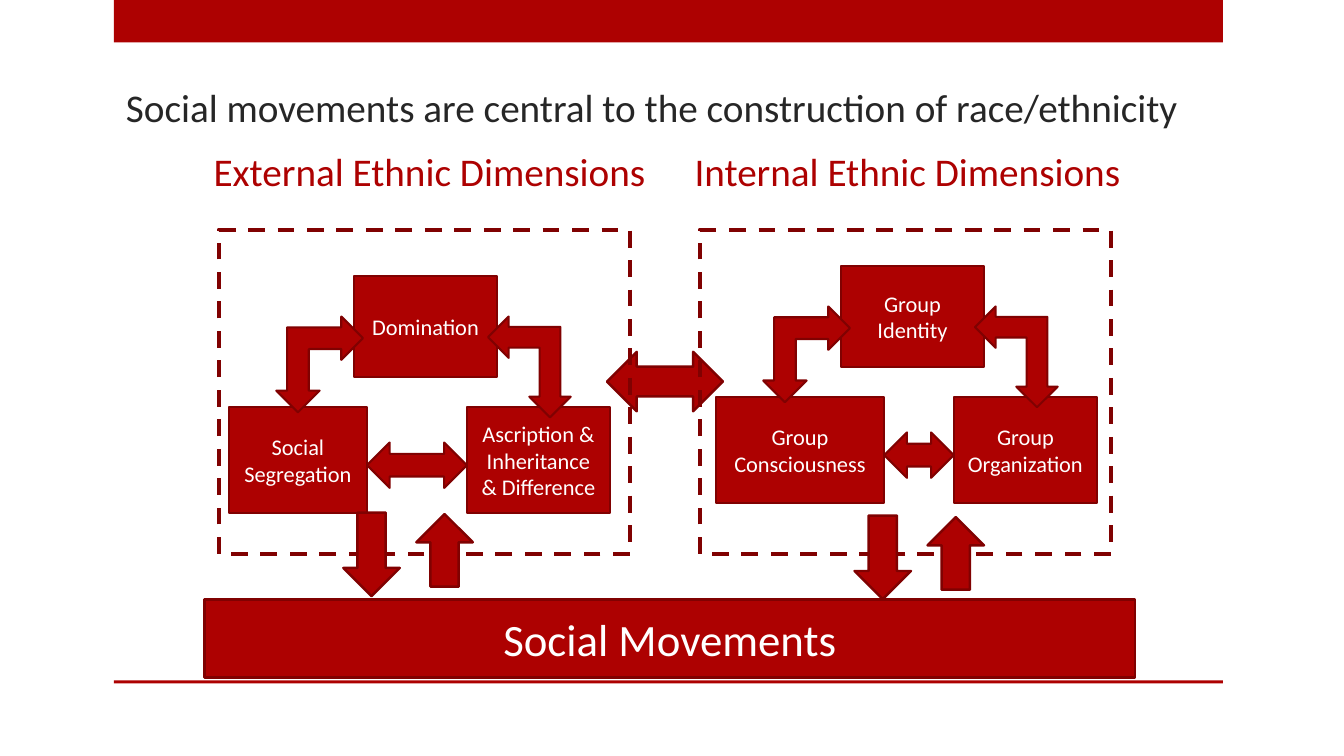
from pptx import Presentation
from pptx.dml.color import RGBColor
from pptx.enum.dml import MSO_LINE
from pptx.enum.shapes import MSO_SHAPE
from pptx.enum.text import MSO_ANCHOR, PP_ALIGN
from pptx.util import Inches, Pt

RED = RGBColor(0xAD, 0x01, 0x01)
DARK = RGBColor(0x80, 0x01, 0x01)
INK = RGBColor(0x26, 0x26, 0x26)
WHITE = RGBColor(0xFF, 0xFF, 0xFF)
RECT = MSO_SHAPE.RECTANGLE
ARROW = MSO_SHAPE.RIGHT_ARROW
DOUBLE = MSO_SHAPE.LEFT_RIGHT_ARROW
ELBOW = MSO_SHAPE.LEFT_UP_ARROW
DASH = MSO_LINE.DASH
MIDDLE, BOTTOM = MSO_ANCHOR.MIDDLE, MSO_ANCHOR.BOTTOM
CENTER = PP_ALIGN.CENTER
FONT = "Calibri"


def style(shape, text, size, color):
    shape.text_frame.text = text
    for par in shape.text_frame.paragraphs:
        par.font.name = FONT
        par.font.size = Pt(size)
        par.font.color.rgb = color


def add_solid(slide, kind, x, y, w, h, line=1.5, turn=0):
    """Red shape with a dark outline, or none if line is 0."""
    shape = slide.shapes.add_shape(kind, Inches(x), Inches(y), Inches(w), Inches(h))
    shape.shadow.inherit = False
    shape.fill.solid()
    shape.fill.fore_color.rgb = RED
    if line:
        shape.line.color.rgb = DARK
        shape.line.width = Pt(line)
    else:
        shape.line.fill.background()
    shape.rotation = turn
    return shape


def add_box(slide, text, x, y, w, h, size=16, line=1.5):
    box = add_solid(slide, RECT, x, y, w, h, line)
    box.text_frame.word_wrap = True
    box.text_frame.vertical_anchor = MIDDLE
    style(box, text, size, WHITE)
    for par in box.text_frame.paragraphs:
        par.alignment = CENTER


def add_label(slide, text, x, y, w, h, color, wrap=False):
    label = slide.shapes.add_textbox(Inches(x), Inches(y), Inches(w), Inches(h))
    label.text_frame.word_wrap = wrap
    label.text_frame.vertical_anchor = BOTTOM
    style(label, text, 28, color)


def add_bands(slide):
    for y, h in ((0, 0.42), (6.75, 0.03)):
        add_solid(slide, RECT, 1.13, y, 11, h, line=0)


def add_triad(slide, x, y, names, wide):
    """Three boxes joined by double arrows; wide is the lower left box."""
    top, left, right = names
    add_box(slide, top, x + 1.24, y, 1.42, 1)
    add_box(slide, left, x, y + 1.3, wide, 1.05)
    add_box(slide, right, x + 2.36, y + 1.3, 1.42, 1.05)
    add_solid(slide, ELBOW, x + 0.47, y + 0.4, 0.86, 0.95, turn=180)
    add_solid(slide, ELBOW, x + 2.48, y + 0.49, 1, 0.82, turn=270)
    add_solid(slide, DOUBLE, x + wide, y + 1.65, 2.36 - wide, 0.45)


def add_frame(slide, x, y):
    frame = slide.shapes.add_shape(RECT, Inches(x), Inches(y), Inches(4.08), Inches(3.22))
    frame.shadow.inherit = False
    frame.fill.background()
    frame.line.color.rgb = DARK
    frame.line.width = Pt(3)
    frame.line.dash_style = DASH


def add_flow(slide, x, y):
    """Down and up arrows between a panel and the base."""
    add_solid(slide, ARROW, x, y + 0.04, 0.83, 0.56, 1.75, 90)
    add_solid(slide, ARROW, x + 0.78, y, 0.72, 0.56, 1.75, 270)


def add_panel(slide, x, y, head, width, names, wide, shift, flow):
    add_triad(slide, x + 0.1 + shift[0], y + 0.46 + shift[1], names, wide)
    add_frame(slide, x, y)
    add_label(slide, head, x - 0.15, y - 0.87, width, 0.57, RED)
    add_flow(slide, x + flow[0], y + flow[1])


def main():
    deck = Presentation()
    deck.slide_width, deck.slide_height = Inches(13.33), Inches(7.5)
    slide = deck.slides.add_slide(deck.slide_layouts[6])

    # Bands and title
    add_bands(slide)
    add_label(slide, "Social movements are central to the construction of race/ethnicity",
              1.15, 0.67, 10.98, 0.67, INK, wrap=True)

    # Link between the panels, then base
    add_solid(slide, DOUBLE, 6.02, 3.49, 1.15, 0.59, 1.75)
    add_box(slide, "Social Movements", 2.03, 5.95, 9.23, 0.77, 32, 1.75)

    # Panels
    add_panel(slide, 2.17, 2.28, "External Ethnic Dimensions", 4.53,
              ("Domination", "Social Segregation",
               "Ascription & Inheritance\v& Difference"),
              1.37, (0, 0), (1.1, 2.9))
    add_panel(slide, 6.94, 2.28, "Internal Ethnic Dimensions", 4.47,
              ("Group Identity", "Group Consciousness", "Group Organization"),
              1.67, (0.06, -0.1), (1.4, 2.93))

    deck.save("out.pptx")


if __name__ == "__main__":
    main()
